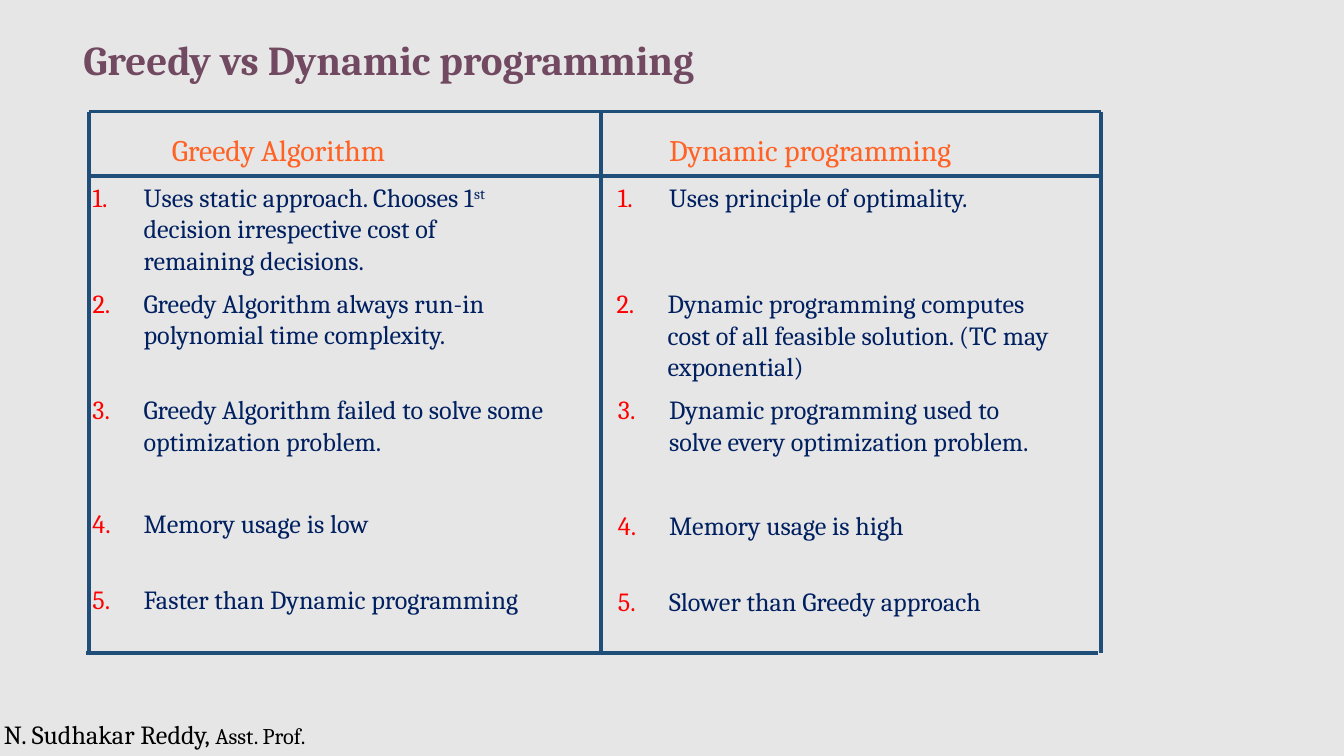
from dataclasses import dataclass

from lxml.etree import SubElement
from pptx import Presentation
from pptx.dml.color import RGBColor
from pptx.enum.shapes import MSO_CONNECTOR
from pptx.enum.text import MSO_ANCHOR, MSO_AUTO_SIZE, PP_ALIGN
from pptx.oxml.ns import qn
from pptx.util import Inches, Pt


@dataclass(frozen=True)
class Theme:
    font: str = "Cambria"
    background: str = "E7E6E6"
    title: str = "714A62"
    heading: str = "FF6224"
    body: str = "002060"
    number: str = "FF0000"
    rule: str = "1F4E79"
    footer: str = "000000"
    title_size: int = 22
    heading_size: int = 16
    body_size: int = 14
    small_size: int = 12
    rule_width: int = 2


THEME = Theme()

# Grid edges
LEFT, MIDDLE, RIGHT = 0.66, 4.47, 8.19
TOP, HEADER, BOTTOM = 0.83, 1.31, 4.86
INDENT = 0.38

# Each point: left, top, width, height, then its text pieces;
# every second piece is a superscript.
GREEDY_POINTS = [
    (0.59, 1.3, 3.55, 0.81, ["Uses static approach. Chooses 1", "st",
                             " decision irrespective cost of remaining decisions."]),
    (0.59, 2.09, 3.39, 0.57, ["Greedy Algorithm always run-in polynomial time complexity."]),
    (0.59, 2.88, 3.63, 0.57, ["Greedy Algorithm failed to solve some optimization problem."]),
    (0.59, 3.73, 3, 0.34, ["Memory usage is low"]),
    (0.59, 4.29, 3.54, 0.34, ["Faster than Dynamic programming"]),
]
DYNAMIC_POINTS = [
    (4.5, 1.3, 3, 0.34, ["Uses principle of optimality."]),
    (4.49, 2.09, 3.54, 0.81, ["Dynamic programming computes cost of all feasible solution. "
                              "(TC may exponential)"]),
    (4.5, 2.88, 3.44, 0.57, ["Dynamic programming used to solve every optimization problem."]),
    (4.5, 3.74, 3, 0.34, ["Memory usage is high"]),
    (4.5, 4.31, 3.54, 0.34, ["Slower than Greedy approach"]),
]


def add_run(paragraph, text, size, color, bold=False):
    run = paragraph.add_run()
    run.text = text
    run.font.name = THEME.font
    run.font.size = Pt(size)
    run.font.bold = bold
    run.font.color.rgb = RGBColor.from_string(color)
    return run


def add_text_box(slide, left, top, width, height, wrap=True):
    """Add an empty text box and return its first paragraph."""
    shape = slide.shapes.add_textbox(Inches(left), Inches(top), Inches(width), Inches(height))
    shape.text_frame.word_wrap = wrap
    shape.text_frame.auto_size = MSO_AUTO_SIZE.SHAPE_TO_FIT_TEXT
    return shape.text_frame.paragraphs[0]


def number_paragraph(paragraph, number):
    properties = paragraph._p.get_or_add_pPr()
    properties.set("marL", str(Inches(INDENT)))
    properties.set("indent", str(-Inches(INDENT)))
    bullet_color = SubElement(properties, qn("a:buClr"))
    SubElement(bullet_color, qn("a:srgbClr"), val=THEME.number)
    SubElement(properties, qn("a:buAutoNum"), type="arabicPeriod", startAt=str(number))


def add_points(slide, points):
    for number, (left, top, width, height, pieces) in enumerate(points, start=1):
        paragraph = add_text_box(slide, left, top, width, height)
        number_paragraph(paragraph, number)
        for index, piece in enumerate(pieces):
            run = add_run(paragraph, piece, THEME.body_size, THEME.body)
            if index % 2:
                run._r.get_or_add_rPr().set("baseline", "30000")


def add_title(slide, text):
    title = slide.shapes.title
    title.left, title.top = Inches(0.52), Inches(0.24)
    title.width, title.height = Inches(8.47), Inches(0.44)
    frame = title.text_frame
    frame.auto_size = MSO_AUTO_SIZE.NONE
    frame.vertical_anchor = MSO_ANCHOR.MIDDLE
    paragraph = frame.paragraphs[0]
    paragraph.alignment = PP_ALIGN.LEFT
    paragraph.line_spacing = 0.9
    add_run(paragraph, text, THEME.title_size, THEME.title, bold=True)


def add_heading(slide, left, width, text):
    paragraph = add_text_box(slide, left, 0.93, width, 0.37, wrap=False)
    add_run(paragraph, text, THEME.heading_size, THEME.heading)


def add_rule(slide, x1, y1, x2, y2):
    line = slide.shapes.add_connector(
        MSO_CONNECTOR.STRAIGHT, Inches(x1), Inches(y1), Inches(x2), Inches(y2))
    line.line.color.rgb = RGBColor.from_string(THEME.rule)
    line.line.width = Pt(THEME.rule_width)
    SubElement(line._element.spPr, qn("a:effectLst"))


def add_grid(slide):
    for x in (LEFT, MIDDLE, RIGHT):
        add_rule(slide, x, TOP, x, BOTTOM)
    for y in (TOP, HEADER):
        add_rule(slide, LEFT, y, RIGHT, y)
    # The bottom rule sits slightly to the left
    add_rule(slide, LEFT - 0.02, BOTTOM, RIGHT - 0.02, BOTTOM)


def add_footer(slide):
    paragraph = add_text_box(slide, -0.07, 5.3, 3.2, 0.34)
    add_run(paragraph, "N. Sudhakar Reddy, ", THEME.body_size, THEME.footer)
    add_run(paragraph, "Asst. Prof.", THEME.small_size, THEME.footer)


def main():
    presentation = Presentation()
    # Widescreen, 16:9
    presentation.slide_width = Inches(10)
    presentation.slide_height = Inches(10 * 9 / 16)
    slide = presentation.slides.add_slide(presentation.slide_layouts[5])  # Title Only
    slide.background.fill.solid()
    slide.background.fill.fore_color.rgb = RGBColor.from_string(THEME.background)

    # Footer and title
    add_footer(slide)
    add_title(slide, "Greedy vs Dynamic programming")

    # Comparison grid
    add_heading(slide, 4.88, 2.41, "Dynamic programming")
    add_heading(slide, 1.18, 1.9, "Greedy Algorithm")
    add_grid(slide)
    add_points(slide, GREEDY_POINTS)
    add_points(slide, DYNAMIC_POINTS)

    presentation.save("out.pptx")


if __name__ == "__main__":
    main()
